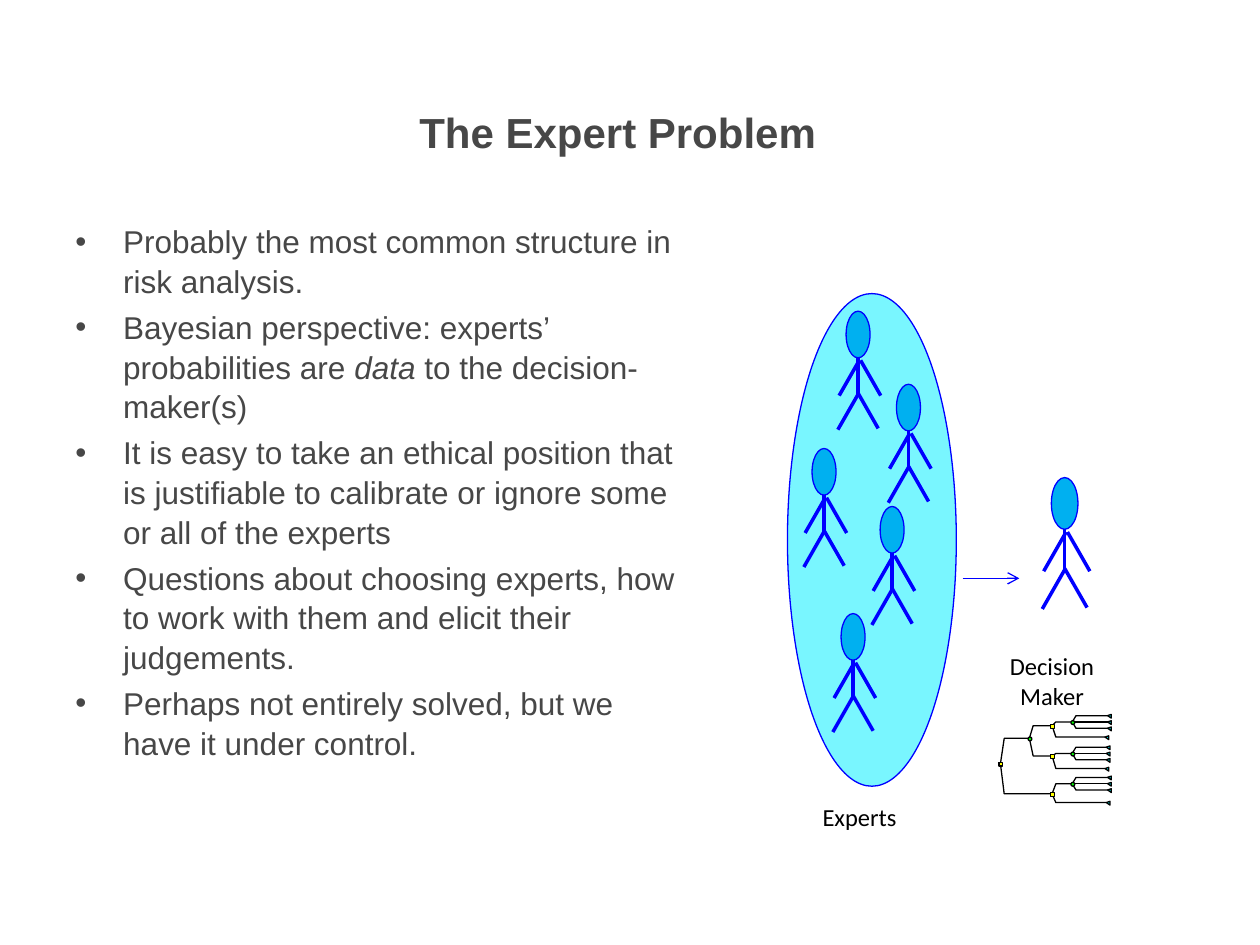
from lxml.etree import SubElement
from pptx import Presentation
from pptx.dml.color import RGBColor
from pptx.enum.shapes import MSO_CONNECTOR, MSO_SHAPE
from pptx.enum.text import MSO_ANCHOR, PP_ALIGN
from pptx.oxml.ns import qn
from pptx.util import Inches, Pt

GREY = RGBColor(0x47, 0x47, 0x47)
BLACK = RGBColor(0, 0, 0)
BLUE = RGBColor(0, 0, 0xFF)
SKY = RGBColor(0, 0xB0, 0xF0)
PALE = RGBColor(0x79, 0xF6, 0xFF)
CYAN = RGBColor(0, 0xFF, 0xFF)
GREEN = RGBColor(0, 0xFF, 0)
YELLOW = RGBColor(0xFF, 0xFF, 0)

MARK = 0.03
LIMBS = [
    ((0, 0.37), (0, 0.68)),
    ((0, 0.65), (0.16, 0.93)),
    ((-0.16, 0.94), (0, 0.66)),
    ((0.02, 0.39), (0.18, 0.67)),
    ((-0.15, 0.67), (0.01, 0.39)),
]
EXPERTS = [(6.81, 2.47), (7.21, 3.05), (6.54, 3.56), (7.08, 4.02), (6.77, 4.87)]

BULLETS = [
    [("Probably the most common structure in risk analysis.", False)],
    [
        ("Bayesian perspective: experts’ probabilities are ", False),
        ("data", True),
        (" to the decision-maker(s)", False),
    ],
    [("It is easy to take an ethical position that is justifiable to calibrate "
      "or ignore some or all of the experts", False)],
    [("Questions about choosing experts, how to work with them and elicit "
      "their judgements.", False)],
    [("Perhaps not entirely solved, but we have it under control.", False)],
]


def chance_fan(y, leaf_x):
    return "chance", 8.51, y, [(leaf_x, y + step) for step in (-0.05, 0, 0.05)]


UPPER = ("decision", 8.35, 5.76, [chance_fan(5.73, 8.79), (8.77, 5.85)])
MIDDLE = ("decision", 8.35, 6.0, [chance_fan(5.98, 8.78), (8.77, 6.1)])
LOWER = ("decision", 8.35, 6.3, [chance_fan(6.22, 8.79), (8.78, 6.37)])
TREE = ("decision", 7.94, 6.06, [("chance", 8.17, 5.86, [UPPER, MIDDLE]), LOWER])


class Canvas:
    def __init__(self, slide):
        self.slide = slide
        self.shapes = slide.shapes

    def text(self, box, paragraphs, font, size, color, bold=False, bullets=False,
             align=PP_ALIGN.LEFT, anchor=MSO_ANCHOR.TOP):
        frame = self.shapes.add_textbox(*map(Inches, box)).text_frame
        frame.word_wrap = True
        frame.vertical_anchor = anchor
        for index, runs in enumerate(paragraphs):
            paragraph = frame.add_paragraph() if index else frame.paragraphs[0]
            paragraph.alignment = align
            if bullets:
                self.bullet(paragraph)
                paragraph.space_before = Pt(3.6 if index else 0)
            for content, italic in runs:
                run = paragraph.add_run()
                run.text = content
                run.font.name = font
                run.font.size = Pt(size)
                run.font.color.rgb = color
                run.font.bold = bold
                run.font.italic = italic

    def bullet(self, paragraph):
        properties = paragraph._p.get_or_add_pPr()
        properties.set("marL", str(Inches(0.38)))
        properties.set("indent", str(Inches(-0.38)))
        SubElement(properties, qn("a:buFont"), typeface="Arial")
        SubElement(properties, qn("a:buChar"), char="•")
        paragraph.line_spacing = 1.05

    def paint(self, shape, fill, line, width):
        shape.shadow.inherit = False
        if fill is None:
            shape.fill.background()
        else:
            shape.fill.solid()
            shape.fill.fore_color.rgb = fill
        shape.line.color.rgb = line
        shape.line.width = Pt(width)

    def shape(self, kind, box, fill, line=BLUE, width=0.75):
        self.paint(self.shapes.add_shape(kind, *map(Inches, box)), fill, line, width)

    def outline(self, points, fill=None):
        start, *rest = [(Inches(x), Inches(y)) for x, y in points]
        builder = self.shapes.build_freeform(*start)
        builder.add_line_segments(rest, close=fill is not None)
        self.paint(builder.convert_to_shape(), fill, BLACK, 0)

    def line(self, start, end, color=BLUE, width=2.0, arrow=False):
        connector = self.shapes.add_connector(
            MSO_CONNECTOR.STRAIGHT, *map(Inches, (*start, *end)))
        connector.line.color.rgb = color
        connector.line.width = Pt(width)
        if arrow:
            SubElement(connector.line._get_or_add_ln(), qn("a:tailEnd"), type="arrow")
        SubElement(connector._element.spPr, qn("a:effectLst"))

    def person(self, x, top, scale=1.0):
        head = (x - 0.095 * scale, top, 0.19 * scale, 0.37 * scale)
        self.shape(MSO_SHAPE.OVAL, head, SKY)
        for limb in LIMBS:
            self.line(*[(x + dx * scale, top + dy * scale) for dx, dy in limb])

    def leaf(self, x, y):
        right, top = x + MARK, y - 0.01
        self.outline([(x, y), (right, top), (right, top + MARK)], CYAN)

    def tree(self, node):
        kind, x, y, children = node
        for child in children:
            is_leaf = len(child) == 2
            child_x, child_y = child if is_leaf else (child[1] - 0.01, child[2])
            self.outline([(child_x, child_y), (x + 0.03, child_y), (x, y)])
            if is_leaf:
                self.leaf(*child)
            else:
                self.tree(child)
        preset, fill = {
            "chance": (MSO_SHAPE.OVAL, GREEN),
            "decision": (MSO_SHAPE.RECTANGLE, YELLOW),
        }[kind]
        self.shape(preset, (x - 0.01, y - 0.01, MARK, MARK), fill, BLACK, 0)


def main():
    presentation = Presentation()
    presentation.slide_width = Inches(10)
    presentation.slide_height = Inches(7.5)
    canvas = Canvas(presentation.slides.add_slide(presentation.slide_layouts[6]))

    canvas.text((0.5, 1.7, 4.97, 4.95), BULLETS, "Arial", 18, GREY, bullets=True)
    canvas.text((3.23, 0.42, 6.27, 1.25), [[("The Expert Problem", False)]],
                "Arial", 24, GREY, bold=True, anchor=MSO_ANCHOR.MIDDLE)

    canvas.shape(MSO_SHAPE.OVAL, (6.25, 2.33, 1.34, 3.91), PALE)
    for x, top in EXPERTS:
        canvas.person(x, top)
    canvas.person(8.45, 3.79, 1.11)
    canvas.line((7.64, 4.59), (8.09, 4.59), width=0.75, arrow=True)

    canvas.text((6.43, 6.32, 0.9, 0.34), [[("Experts", False)]], "Calibri", 14, BLACK)
    canvas.text((7.82, 5.12, 1.06, 0.57), [[("Decision Maker", False)]],
                "Calibri", 14, BLACK, align=PP_ALIGN.CENTER)

    canvas.line((7.92, 6.06), (7.94, 6.06), BLACK, 0)
    canvas.tree(TREE)
    presentation.save("out.pptx")


if __name__ == "__main__":
    main()
